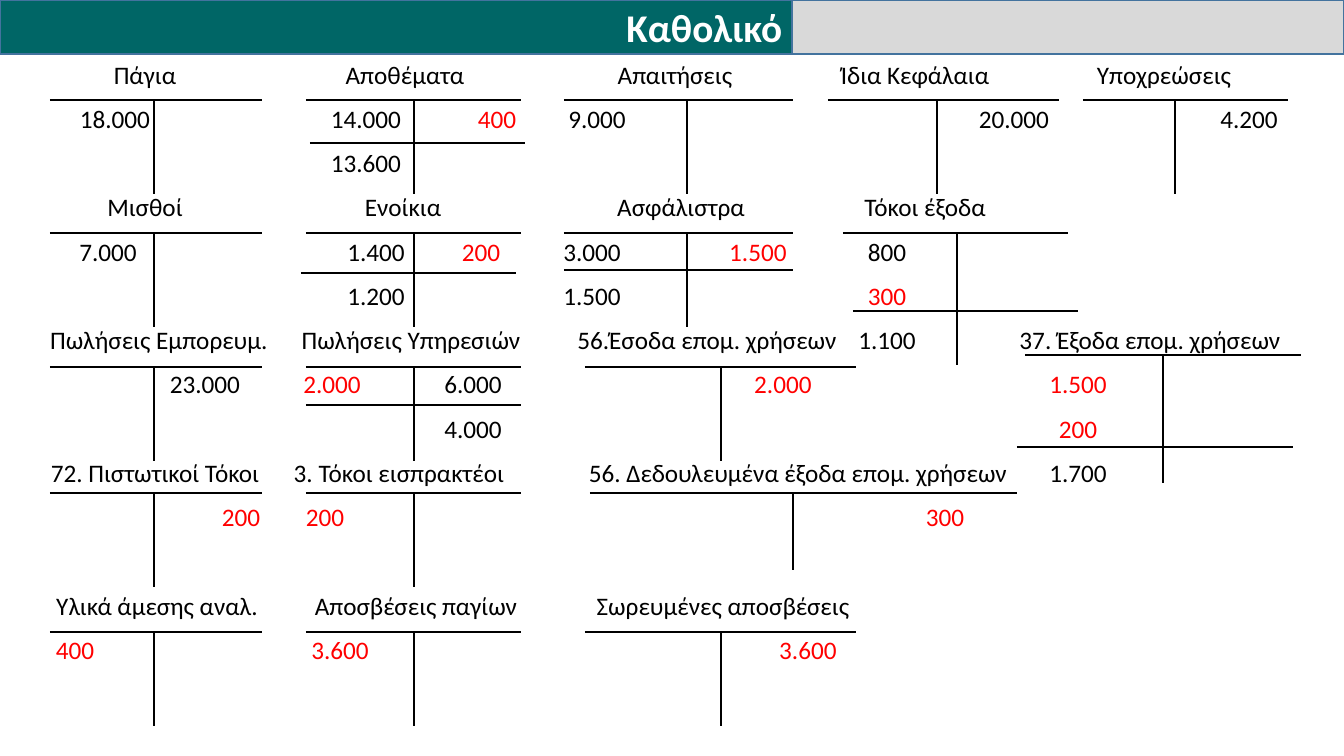
from dataclasses import dataclass
from lxml.etree import SubElement
from pptx import Presentation
from pptx.dml.color import RGBColor
from pptx.enum.shapes import MSO_CONNECTOR as CONNECTOR, MSO_SHAPE as SHAPE
from pptx.enum.text import MSO_ANCHOR as ANCHOR, PP_ALIGN as ALIGN
from pptx.oxml.ns import qn
from pptx.util import Emu, Pt

COLORS = {"black": "000000", "red": "FF0000", "white": "FFFFFF",
          "teal": "006666", "grey": "D9D9D9", "outline": "43739E"}
FONT = "Calibri"
HEADING = "Καθολικό"


@dataclass
class Frame:
    """The T of an account; rise lifts it above the common rule of its row."""
    left: int
    width: int
    stem: int
    depth: int = 94
    rise: int = 0


FIRST = Frame(50, 212, 154)
SECOND = Frame(306, 215, 414)
THIRD = Frame(564, 229, 687)
THIRD_LOW = Frame(585, 271, 721)
THIRD_WIDE = Frame(590, 427, 793, depth=77)
EQUITY = Frame(828, 231, 937)
INTEREST = Frame(843, 225, 957, depth=132)
LIABILITIES = Frame(1083, 205, 1175)
PREPAID = Frame(1025, 276, 1163, depth=128, rise=12)

# Account: frame, title, title centre, then one (centre, amounts) per column.
# Amounts run downwards: "-" skips a line, "*" marks an adjustment in red.
LEDGER = [
    [(FIRST, "Πάγια", 145, (115, "18.000")),
     (SECOND, "Αποθέματα", 405, (366, "14.000 13.600"), (497, "*400")),
     (THIRD, "Απαιτήσεις", 675, (597, "9.000")),
     (EQUITY, "Ίδια Κεφάλαια", 915, (1014, "20.000")),
     (LIABILITIES, "Υποχρεώσεις", 1164, (1249, "4.200"))],
    [(FIRST, "Μισθοί", 145, (108, "7.000")),
     (SECOND, "Ενοίκια", 403, (376, "1.400 1.200"), (481, "*200")),
     (THIRD, "Ασφάλιστρα", 681, (592, "3.000 1.500"), (758, "*1.500")),
     (INTEREST, "Τόκοι έξοδα", 925, (887, "800 *300 1.100"))],
    [(FIRST, "Πωλήσεις Εμπορευμ.", 159, (205, "23.000")),
     (SECOND, "Πωλήσεις Υπηρεσιών", 411, (332, "*2.000"), (473, "6.000 4.000")),
     (THIRD_LOW, "56.Έσοδα επομ. χρήσεων", 707, (783, "*2.000")),
     (PREPAID, "37. Έξοδα επομ. χρήσεων", 1150, (1078, "*1.500 *200 1.700"))],
    [(FIRST, "72. Πιστωτικοί Τόκοι", 155, (241, "*200")),
     (SECOND, "3. Τόκοι εισπρακτέοι", 399, (325, "*200")),
     (THIRD_WIDE, "56. Δεδουλευμένα έξοδα επομ. χρήσεων", 798, (945, "*300"))],
    [(FIRST, "Υλικά άμεσης αναλ.", 157, (75, "*400")),
     (SECOND, "Αποσβέσεις παγίων", 416, (340, "*3.600")),
     (THIRD_LOW, "Σωρευμένες αποσβέσεις", 723, (808, "*3.600"))],
]
RULE_TOPS = [100, 233, 367, 493, 632]
# Subtotal rules: sideways shift and drop from the rule of the account.
SUBTOTALS = {"Αποθέματα": (4, 43), "Ενοίκια": (-5, 40), "Ασφάλιστρα": (0, 37),
             "Τόκοι έξοδα": (10, 78), "Πωλήσεις Υπηρεσιών": (0, 38),
             "37. Έξοδα επομ. χρήσεων": (-8, 92)}

SLIDE_W, SLIDE_H = 1344, 756
BAND_H, TEAL_W = 54, 792
LEDGER_LEFT, LEDGER_W, INSET = 35, 1284, 10
LINE_PT, GAP_PT = 21.6, 10
LINES_PER_ROW = 3


def px(length):
    return Emu(round(length * 12192000 / SLIDE_W))


def rgb(name):
    return RGBColor.from_string(COLORS[name])


def style(run, size, color, bold=False):
    run.font.name, run.font.size, run.font.bold = FONT, Pt(size), bold
    run.font.color.rgb = rgb(color)


def add_band(slide, left, width, fill):
    band = slide.shapes.add_shape(SHAPE.RECTANGLE, px(left), 0, px(width), px(BAND_H))
    band.shadow.inherit = False
    band.fill.solid()
    band.fill.fore_color.rgb = rgb(fill)
    band.line.color.rgb = rgb("outline")
    band.line.width = Pt(1)
    return band


def add_stroke(slide, *ends):
    stroke = slide.shapes.add_connector(CONNECTOR.STRAIGHT, *map(px, ends))
    stroke.line.color.rgb = rgb("black")
    stroke.line.width = Pt(1.5)
    SubElement(stroke._element.spPr, qn("a:effectLst"))


def add_account_strokes(slide, frame, title, rule_top):
    top = rule_top - frame.rise
    right = frame.left + frame.width
    add_stroke(slide, frame.left, top, right, top)
    add_stroke(slide, frame.stem, top, frame.stem, top + frame.depth)
    if title in SUBTOTALS:
        shift, drop = SUBTOTALS[title]
        add_stroke(slide, frame.left + shift, top + drop, right + shift, top + drop)


def ledger_lines():
    """Gather titles and amounts by text line, each sorted from left to right."""
    lines = {}
    for row, accounts in enumerate(LEDGER):
        first = row * LINES_PER_ROW
        for _, title, center, *columns in accounts:
            lines.setdefault(first, []).append((center, title, "black"))
            for column, amounts in columns:
                for line, amount in enumerate(amounts.split(), first + 1):
                    color = "red" if amount.startswith("*") else "black"
                    lines.setdefault(line, []).append((column, amount.strip("*"), color))
    return [(line, sorted(lines[line])) for line in sorted(lines)]


def add_ledger(slide):
    """Write every text line as one paragraph with a centred tab per item."""
    box = slide.shapes.add_textbox(px(LEDGER_LEFT), px(BAND_H), px(LEDGER_W),
                                   px(SLIDE_H - BAND_H))
    frame = box.text_frame
    frame.word_wrap = True
    frame.margin_left = frame.margin_right = px(INSET)
    previous = -1
    for line, items in ledger_lines():
        paragraph = frame.add_paragraph() if line else frame.paragraphs[0]
        skipped = line - previous - 1
        previous = line
        paragraph.alignment = ALIGN.LEFT
        paragraph.line_spacing = Pt(LINE_PT)
        paragraph.space_before = Pt(GAP_PT + skipped * (LINE_PT + GAP_PT))
        stops = SubElement(paragraph._p.get_or_add_pPr(), qn("a:tabLst"))
        for center, words, color in items:
            stop = px(center - LEDGER_LEFT - INSET)
            SubElement(stops, qn("a:tab"), pos=str(stop), algn="ctr")
            run = paragraph.add_run()
            run.text = "\t" + words
            style(run, 18, color)


def main():
    deck = Presentation()
    deck.slide_width, deck.slide_height = px(SLIDE_W), px(SLIDE_H)
    slide = deck.slides.add_slide(deck.slide_layouts[6])

    add_ledger(slide)
    heading = add_band(slide, 0, TEAL_W, "teal").text_frame
    heading.text = HEADING
    heading.vertical_anchor = ANCHOR.MIDDLE
    heading.paragraphs[0].alignment = ALIGN.RIGHT
    style(heading.paragraphs[0].runs[0], 28, "white", bold=True)
    add_band(slide, TEAL_W, SLIDE_W - TEAL_W, "grey")

    for rule_top, accounts in zip(RULE_TOPS, LEDGER):
        for frame, title, *_ in accounts:
            add_account_strokes(slide, frame, title, rule_top)
    deck.save("out.pptx")


if __name__ == "__main__":
    main()
